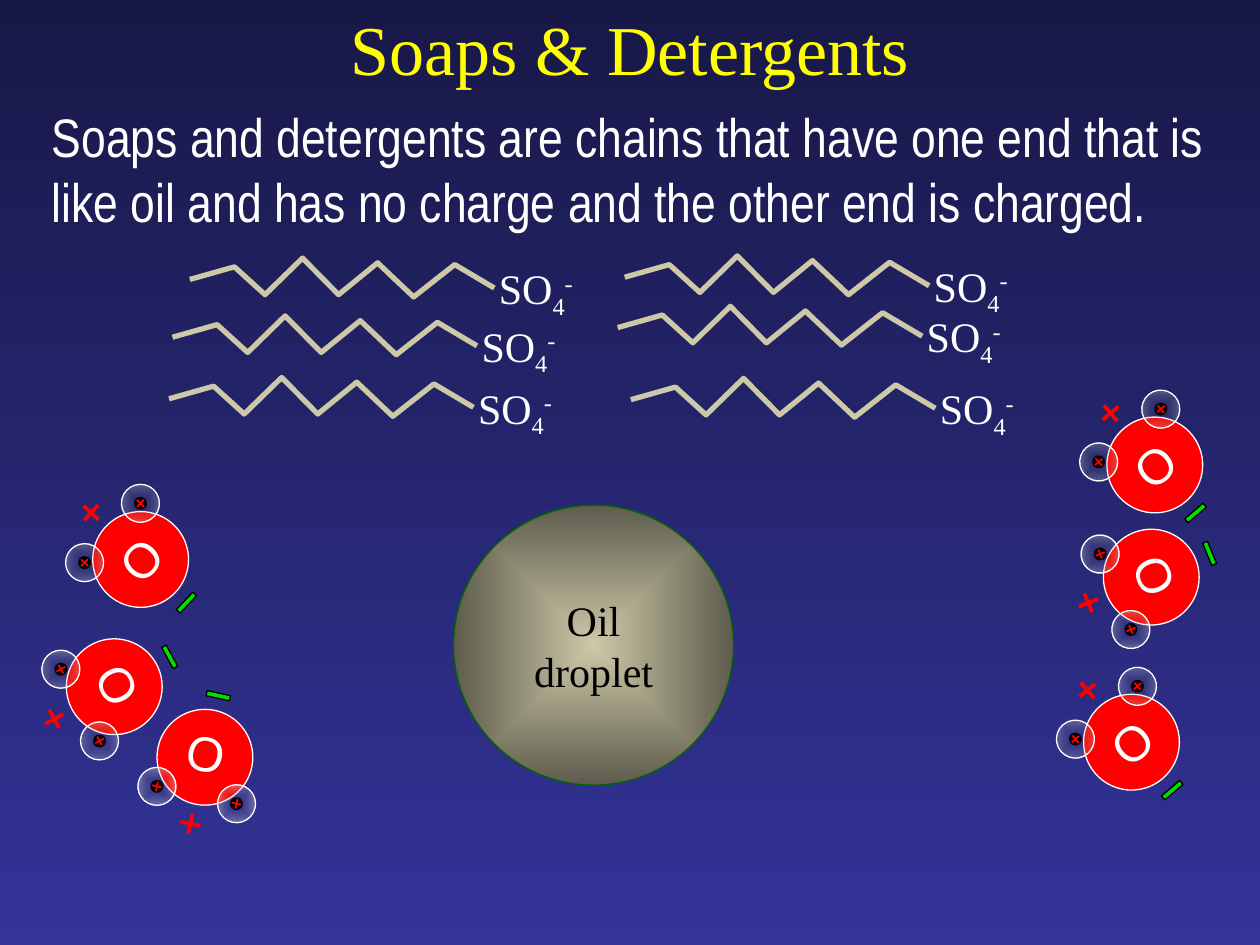
import math
from dataclasses import dataclass

import pptx
import pptx.dml.color
import pptx.enum.shapes
import pptx.enum.text
import pptx.oxml
import pptx.oxml.ns
import pptx.util

Pt = pptx.util.Pt
SHAPE = pptx.enum.shapes.MSO_SHAPE
ALIGN = pptx.enum.text.PP_ALIGN
ANCHOR = pptx.enum.text.MSO_ANCHOR
qn = pptx.oxml.ns.qn
DRAWING_NS = pptx.oxml.ns.nsdecls("a")


@dataclass(frozen=True)
class Theme:
    sky_top: str = "181847"
    sky_bottom: str = "333399"
    title: str = "FFFF00"
    text: str = "FFFFFF"
    oxygen: str = "FF0000"
    hydrogen_core: str = "666666"
    hydrogen_rim: str = "FFFFFF"
    proton: str = "000000"
    positive: str = "FF0000"
    negative: str = "00E000"
    dark: str = "000000"
    oil_core: str = "CDC8A7"
    oil_rim: str = "5E5C4D"
    oil_line: str = "006600"
    chain: str = "CDC8A7"
    serif: str = "Times New Roman"
    sans: str = "Arial"
    narrow: str = "Arial Narrow"
    title_size: float = 40
    body_size: float = 31
    atom_size: float = 28
    label_size: float = 24
    outline: float = 0.75
    chain_width: float = 3


THEME = Theme()

WATERS = [
    (646.6, 424.1, 319.6),
    (117.1, 432.7, 192.3),
    (65.3, 392.4, 241.7),
    (657.9, 329.8, 247.8),
    (80.4, 319.7, 313.3),
    (659.9, 265.7, 319.6),
]
CHAINS = [
    (353, 175), (357, 146.2), (108.5, 147.5),
    (98.6, 180.5), (96.6, 215.7), (360.5, 216.2),
]
ZIGZAG = [
    (0, 12.2), (25.5, 5), (43, 20.9), (64.4, 0), (85, 20.9),
    (107.3, 2.7), (127.9, 22.2), (151.4, 3.7), (174, 17.1),
]


def rgb(code):
    return pptx.dml.color.RGBColor.from_string(code)


def style_run(run, font, size, color):
    run.font.name = font
    run.font.size = Pt(size)
    run.font.color.rgb = rgb(color)


def write(frame, words, font, size, color, align=ALIGN.LEFT, anchor=ANCHOR.TOP, wrap=True):
    frame.word_wrap = wrap
    frame.vertical_anchor = anchor
    paragraph = frame.paragraphs[0]
    paragraph.text = words
    paragraph.alignment = align
    for run in paragraph.runs:
        style_run(run, font, size, color)


def add_text(slide, box, words, font, size, color, **layout):
    frame = slide.shapes.add_textbox(*map(Pt, box)).text_frame
    write(frame, words, font, size, color, **layout)


def add_part(shapes, kind, center, size, fill=None, line=None, rotation=0):
    (x, y), (width, height) = center, size
    part = shapes.add_shape(
        kind, Pt(x - width / 2), Pt(y - height / 2), Pt(width), Pt(height))
    part.shadow.inherit = False
    part.rotation = rotation
    if fill:
        part.fill.solid()
        part.fill.fore_color.rgb = rgb(fill)
    if line:
        part.line.color.rgb = rgb(line)
        part.line.width = Pt(THEME.outline)
    else:
        part.line.fill.background()
    return part


def fill_from_center(part, core, rim, alphas=(100, 100)):
    part.fill.gradient()
    for stop, color, alpha in zip(part.fill.gradient_stops, (core, rim), alphas):
        stop.color.rgb = rgb(color)
    gradient = part._element.spPr.find(qn("a:gradFill"))
    for color, alpha in zip(gradient.iter(qn("a:srgbClr")), alphas):
        if alpha < 100:
            color.append(pptx.oxml.parse_xml(
                f'<a:alpha {DRAWING_NS} val="{alpha * 1000}"/>'))
    gradient.replace(gradient.find(qn("a:lin")), pptx.oxml.parse_xml(
        f'<a:path {DRAWING_NS} path="shape">'
        '<a:fillToRect l="50000" t="50000" r="50000" b="50000"/></a:path>'))


def add_plus(shapes, center, size, rotation):
    plus = add_part(shapes, SHAPE.CROSS, center, (size, size),
                    THEME.positive, rotation=rotation)
    plus.adjustments[0] = 0.41


def add_water(slide, x, y, rotation):
    shapes = slide.shapes.add_group_shape().shapes

    def at(bearing, distance):
        angle = math.radians(rotation + bearing)
        return x + distance * math.sin(angle), y - distance * math.cos(angle)

    oxygen = add_part(shapes, SHAPE.OVAL, (x, y), (54.7, 54.7),
                      THEME.oxygen, THEME.text, rotation)
    write(oxygen.text_frame, "O", THEME.sans, THEME.atom_size, THEME.text,
          ALIGN.CENTER, ANCHOR.MIDDLE, False)
    hydrogens = [at(bearing, 32.1) for bearing in (46.5, -46.5)]
    for center in hydrogens:
        hydrogen = add_part(shapes, SHAPE.OVAL, center, (21.7, 21.7),
                            line=THEME.text, rotation=rotation)
        fill_from_center(hydrogen, THEME.hydrogen_core, THEME.hydrogen_rim, (0, 45))
    for center in hydrogens:
        add_part(shapes, SHAPE.OVAL, center, (7.4, 7.4), THEME.proton, rotation=rotation)
        add_plus(shapes, center, 5.6, rotation)
    add_plus(shapes, at(0, 38.9), 11.7, rotation)
    add_part(shapes, SHAPE.RECTANGLE, at(180, 36), (13.7, 3),
             THEME.negative, THEME.dark, rotation)


def add_detergent(slide, left, top):
    shapes = slide.shapes.add_group_shape().shapes
    points = [(Pt(left + dx), Pt(top + dy)) for dx, dy in ZIGZAG]
    outline = shapes.build_freeform(*points[0])
    outline.add_line_segments(points[1:], close=False)
    tail = outline.convert_to_shape()
    tail.shadow.inherit = False
    tail.fill.background()
    tail.line.color.rgb = rgb(THEME.chain)
    tail.line.width = Pt(THEME.chain_width)

    head = shapes.add_textbox(Pt(left + 169.5), Pt(top - 0.9), Pt(64), Pt(36)).text_frame
    head.word_wrap = True
    for symbol, baseline in (("SO", 0), ("4", -25000), ("-", 30000)):
        run = head.paragraphs[0].add_run()
        run.text = symbol
        style_run(run, THEME.serif, THEME.label_size, THEME.text)
        if baseline:
            run.font._element.set("baseline", str(baseline))


def add_oil(slide):
    oil = add_part(slide.shapes, SHAPE.OVAL, (339.2, 368.7), (160, 160),
                   line=THEME.oil_line)
    fill_from_center(oil, THEME.oil_core, THEME.oil_rim)
    write(oil.text_frame, "Oil\vdroplet", THEME.serif, THEME.label_size,
          THEME.dark, ALIGN.CENTER, ANCHOR.MIDDLE, False)


def paint_background(slide):
    sky = slide.background.fill
    sky.gradient()
    sky.gradient_angle = 270
    for stop, color in zip(sky.gradient_stops, (THEME.sky_top, THEME.sky_bottom)):
        stop.color.rgb = rgb(color)


def main():
    deck = pptx.Presentation()
    deck.slide_width, deck.slide_height = Pt(720), Pt(540)
    slide = deck.slides.add_slide(deck.slide_layouts[6])
    paint_background(slide)
    add_text(slide, (54, 0, 612, 54), "Soaps & Detergents", THEME.serif,
             THEME.title_size, THEME.title, align=ALIGN.CENTER, anchor=ANCHOR.MIDDLE)
    add_text(slide, (22.5, 55.5, 697.5, 85),
             "Soaps and detergents are chains that have one end that is like oil "
             "and has no charge and the other end is charged.",
             THEME.narrow, THEME.body_size, THEME.text)
    add_oil(slide)
    for water in WATERS:
        add_water(slide, *water)
    for chain in CHAINS:
        add_detergent(slide, *chain)
    deck.save("out.pptx")


if __name__ == "__main__":
    main()
